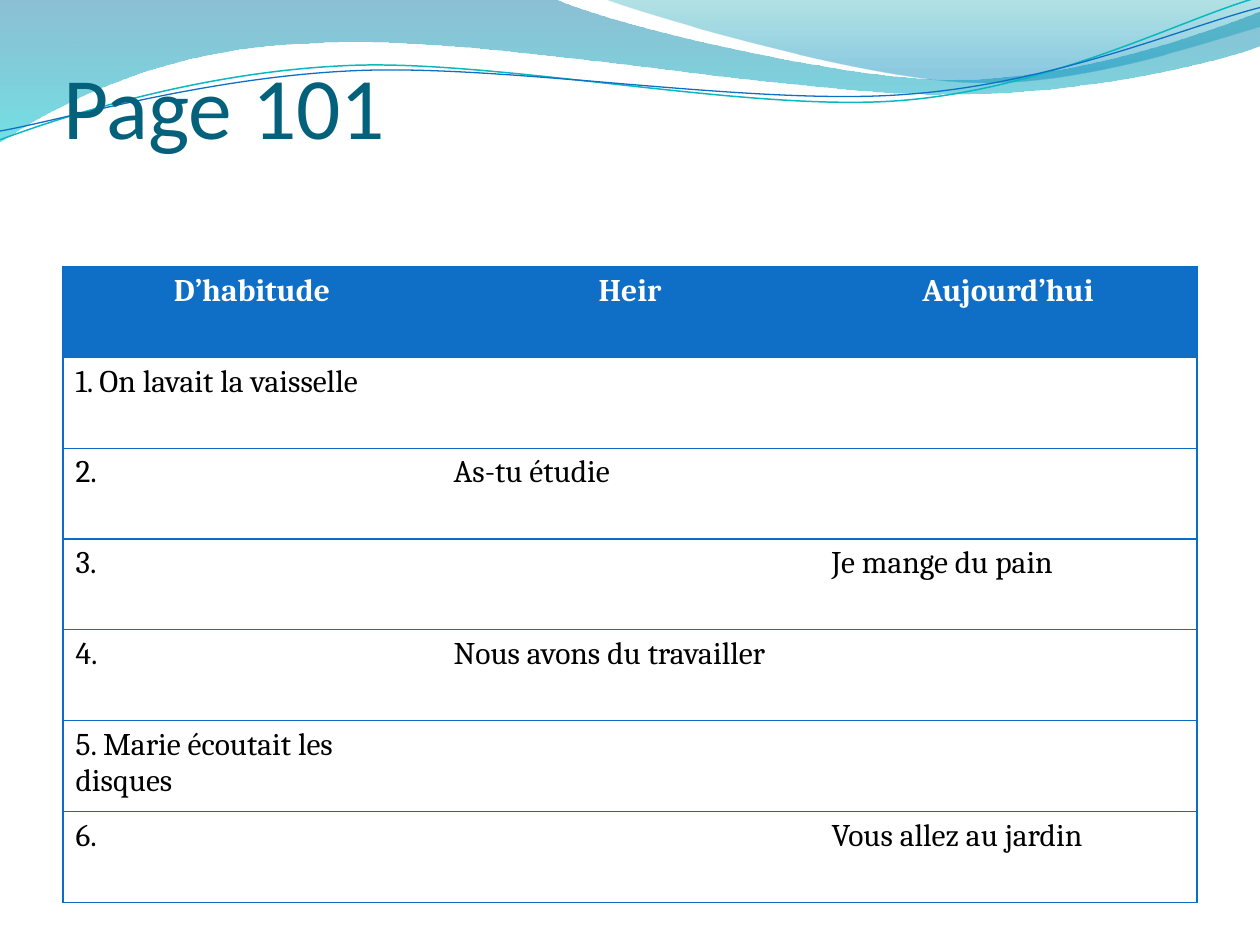
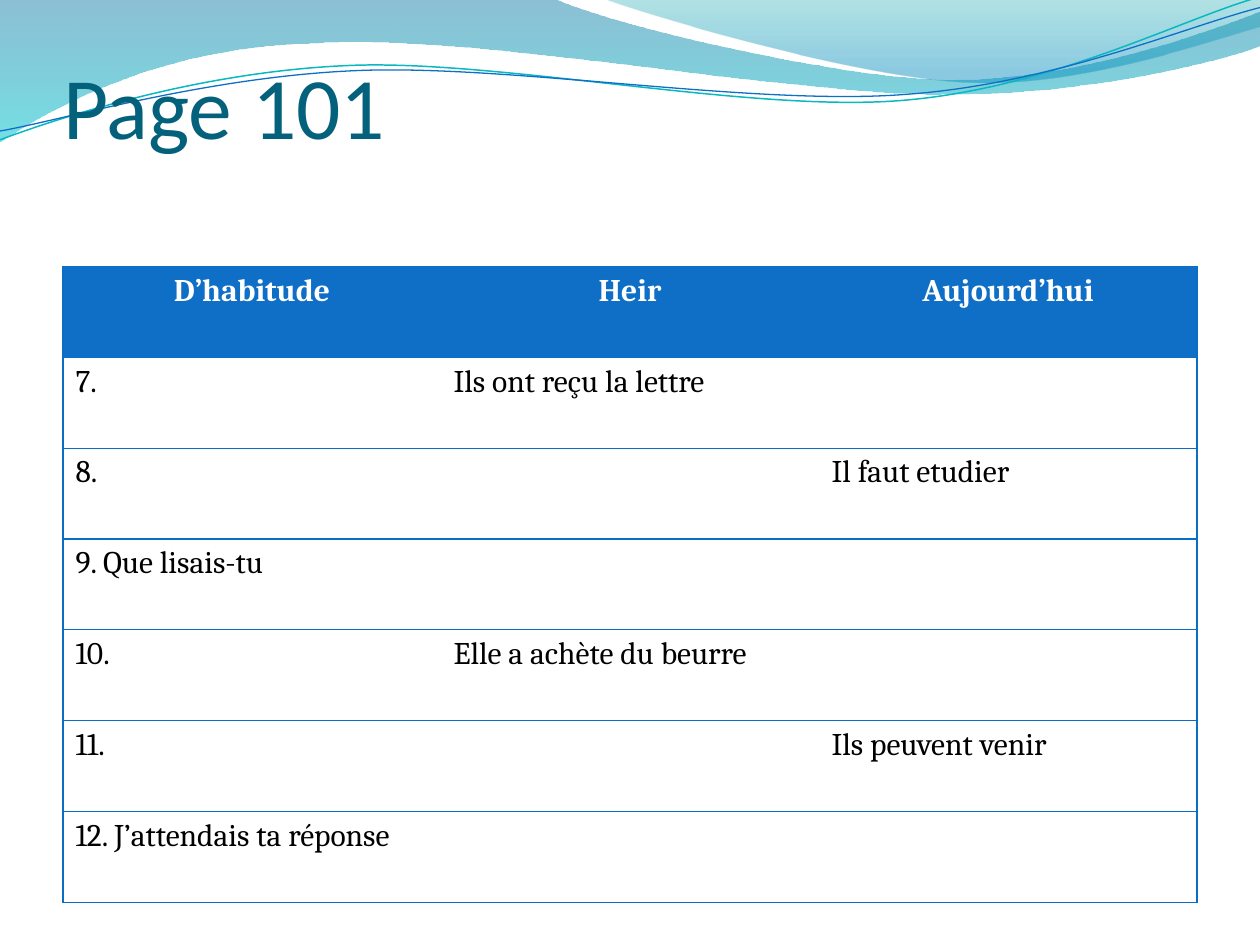
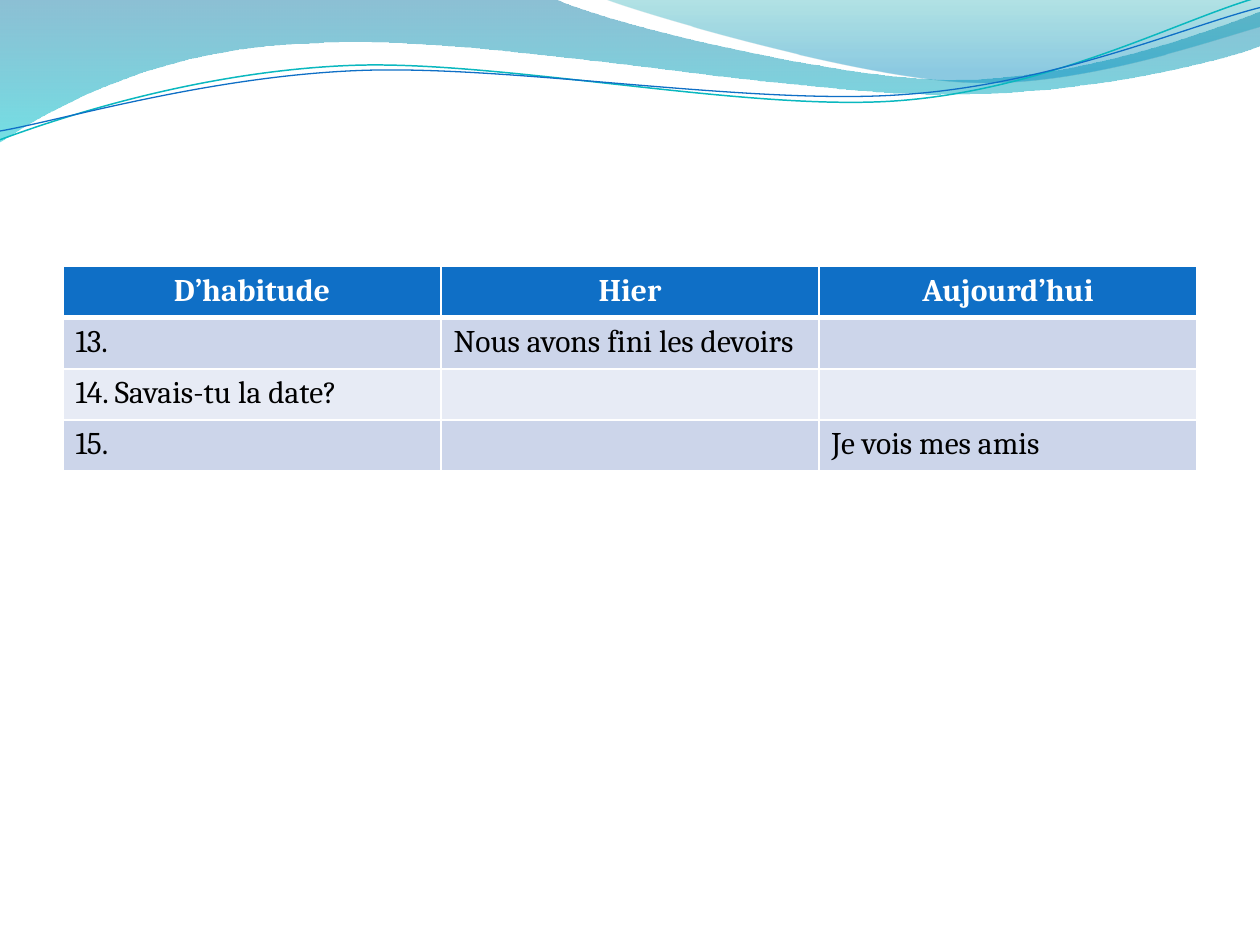
from dataclasses import dataclass

from lxml import etree
from pptx import Presentation
from pptx import util as u
from pptx.dml import color
from pptx.enum import text
from pptx.oxml import ns


@dataclass(frozen=True)
class Theme:
    title_font: str = "Calibri"
    body_font: str = "Cambria"
    title_size: float = 50
    body_size: float = 18
    title: str = "04617B"
    header: str = "0F6FC6"
    rule: str = "0A6DC6"
    white: str = "FFFFFF"
    black: str = "000000"
    bands: tuple = ("CCD5EA", "E7EBF5")
    wave_fill: tuple = ((0, "0074A1", 45), (1, "00C6CF", 55))
    crest_fill: tuple = ((0, "00A1A9", 30), (0.8, "008BBF", 45))
    teal_line: tuple = ("0AB8BF", 0.85)
    blue_line: tuple = ("0F6FC6", 0.75)


@dataclass(frozen=True)
class Outline:
    box: tuple
    segments: tuple


WAVE = Outline((-0.7, -0.7, 721.4, 82.1), (
    (0, 0), (316.8, -0.7),
    (342.7, 12.2, 478.1, 45.4, 545.8, 45.4),
    (614.2, 45.4, 689.8, 18.7, 720, 6.5),
    (720.7, 25.9),
    (707.8, 31.7, 626.4, 54.7, 537.1, 54),
    (447.8, 54, 275, 20.2, 185, 24.5),
    (92.9, 25.9, 33.1, 59.8, -0.7, 81.4),
    (0, 0)))
CREST = Outline((344.9, -0.7, 375.1, 50.4), (
    (344.9, -0.7),
    (366.5, 7.9, 491, 44.6, 553.7, 46.8),
    (616.3, 49.7, 691.9, 23, 720, 15.1),
    (720, 0), (344.9, -0.7)))
TEAL_CURVE = Outline((-1.4, 15.8, 721.4, 51.1), (
    (-1.4, 62.9),
    (33.8, 51.7, 114.1, 29.4, 199.8, 29.9),
    (284.8, 30.3, 425.9, 67.3, 512.5, 64.8),
    (599.1, 62.4, 676.5, 25.7, 720.2, 15.6)))
BLUE_CURVE = Outline((-1.4, 21.6, 722.2, 41.8), (
    (-1.1, 57.9),
    (32.9, 53.7, 118.3, 32.5, 204.1, 33),
    (290.6, 33.4, 428.9, 63.8, 515.5, 61.4),
    (601.4, 59.6, 678.4, 30.1, 721.4, 21.3)))

CURVE_ROTATION = 357.3
NO_GRID_STYLE = "{2D5ABB26-0587-4C30-8999-92F81FD0307C}"
TITLE_ONLY, BLANK = 5, 6
USUALLY, YESTERDAY, TODAY = range(3)


def rgb(value):
    return color.RGBColor.from_string(value)


class Deck:
    def __init__(self, theme):
        self.theme = theme
        self.prs = Presentation()
        self.prs.slide_width, self.prs.slide_height = u.Pt(720), u.Pt(540)
        self.s = None

    def slide(self, title=None):
        layout = TITLE_ONLY if title else BLANK
        self.s = self.prs.slides.add_slide(self.prs.slide_layouts[layout])
        if title:
            self.title(title)

    def font(self, p, name, size, value, bold=False):
        f = p.font
        f.name, f.size, f.bold = name, u.Pt(size), bold
        f.color.rgb = rgb(value)

    def title(self, words):
        sp = self.s.shapes.title
        sp.left, sp.top, sp.width, sp.height = u.Pt(36), u.Pt(23.8), u.Pt(648), u.Pt(66.2)
        tf = sp.text_frame
        tf.text = words
        tf.auto_size = text.MSO_AUTO_SIZE.NONE
        tf.vertical_anchor = text.MSO_ANCHOR.BOTTOM
        tf.margin_left = tf.margin_right = tf.margin_bottom = 0
        tf.margin_top = u.Pt(3.6)
        p = tf.paragraphs[0]
        p.alignment = text.PP_ALIGN.LEFT
        self.font(p, self.theme.title_font, self.theme.title_size, self.theme.title)

    def freeform(self, outline, closed):
        left, top, width, height = outline.box
        builder = self.s.shapes.build_freeform(u.Pt(left), u.Pt(top), scale=1.0)
        builder.add_line_segments([(u.Pt(left + width), u.Pt(top + height))], close=False)
        sp = builder.convert_to_shape()
        sp.shadow.inherit = False
        track = sp.element.xpath(".//a:path")[0]
        for child in list(track):
            track.remove(child)
        for i, seg in enumerate(outline.segments):
            tag = "cubicBezTo" if len(seg) == 6 else "lnTo" if i else "moveTo"
            step = etree.SubElement(track, ns.qn(f"a:{tag}"))
            for x, y in zip(seg[::2], seg[1::2]):
                etree.SubElement(step, ns.qn("a:pt"),
                                 x=str(u.Pt(x - left)), y=str(u.Pt(y - top)))
        if closed:
            etree.SubElement(track, ns.qn("a:close"))
        return sp

    def area(self, outline, stops):
        sp = self.freeform(outline, True)
        sp.line.fill.background()
        sp.fill.gradient()
        sp.fill.gradient_angle = 270
        for stop, (position, value, opacity) in zip(sp.fill.gradient_stops, stops):
            stop.position = position
            stop.color.rgb = rgb(value)
            clr = sp.element.xpath(f".//a:gs/a:srgbClr[@val='{value}']")[0]
            etree.SubElement(clr, ns.qn("a:alpha"), val=str(opacity * 1000))
        return sp

    def curve(self, outline, stroke):
        sp = self.freeform(outline, False)
        sp.rotation = CURVE_ROTATION
        sp.fill.background()
        sp.line.color.rgb = rgb(stroke[0])
        sp.line.width = u.Pt(stroke[1])
        return sp

    def master_waves(self):
        t = self.theme
        waves = [self.area(WAVE, t.wave_fill), self.area(CREST, t.crest_fill),
                 self.curve(TEAL_CURVE, t.teal_line), self.curve(BLUE_CURVE, t.blue_line)]
        tree = self.prs.slide_master.shapes.element
        for i, sp in enumerate(waves):
            sp.element.nvSpPr.cNvPr.id = 20 + i
            tree.insert(2 + i, sp.element)

    def border(self, cell, sides):
        tcPr = cell._tc.get_or_add_tcPr()
        for side in "LRTB":
            if side in sides:
                value, width = sides[side]
                ln = etree.SubElement(tcPr, ns.qn(f"a:ln{side}"), w=str(u.Pt(width)))
                fill = etree.SubElement(ln, ns.qn("a:solidFill"))
                etree.SubElement(fill, ns.qn("a:srgbClr"), val=value)

    def ruled_sides(self, row, col):
        line = (self.theme.rule, 0.75)
        sides = {"T": line, "B": line}
        if col == USUALLY:
            sides["L"] = line
        if col == TODAY:
            sides["R"] = line
        return sides

    def banded_sides(self, row, col):
        sides = dict.fromkeys("LRTB", (self.theme.white, 1))
        if row < 2:
            sides["BT"[row]] = (self.theme.white, 3)
        return sides

    def table(self, headers, rows, row_height, banded=False):
        t = self.theme
        grid = [headers, *rows]
        frame = self.s.shapes.add_table(len(grid), len(headers), u.Pt(36), u.Pt(152.4),
                                        u.Pt(648), u.Pt(row_height * len(grid)))
        frame.element.xpath(".//a:tableStyleId")[0].text = NO_GRID_STYLE
        tbl = frame.table
        tbl.horz_banding = False
        sides = self.banded_sides if banded else self.ruled_sides
        for r, words in enumerate(grid):
            tbl.rows[r].height = u.Pt(row_height)
            for c, word in enumerate(words):
                cell = tbl.cell(r, c)
                cell.text = word
                self.border(cell, sides(r, c))
                if r and not banded:
                    cell.fill.background()
                else:
                    cell.fill.solid()
                    cell.fill.fore_color.rgb = rgb(t.bands[(r - 1) % 2] if r else t.header)
                p = cell.text_frame.paragraphs[0]
                p.alignment = text.PP_ALIGN.LEFT if r else text.PP_ALIGN.CENTER
                self.font(p, t.body_font, t.body_size, t.black if r else t.white, not r)


def exercise_rows(first, sentences):
    rows = []
    for number, (col, sentence) in enumerate(sentences, first):
        row = [""] * 3
        row[col] = sentence
        row[USUALLY] = f"{number}. {row[USUALLY]}".strip()
        rows.append(row)
    return rows


def main():
    deck = Deck(Theme())

    deck.slide("Page 101")
    deck.master_waves()
    deck.table(["D’habitude", "Heir", "Aujourd’hui"], exercise_rows(1, [
        (USUALLY, "On lavait la vaisselle"),
        (YESTERDAY, "As-tu étudie"),
        (TODAY, "Je mange du pain"),
        (YESTERDAY, "Nous avons du travailler"),
        (USUALLY, "Marie écoutait les disques"),
        (TODAY, "Vous allez au jardin"),
    ]), 51.9)

    deck.slide("Page 101")
    deck.table(["D’habitude", "Heir", "Aujourd’hui"], exercise_rows(7, [
        (YESTERDAY, "Ils ont reçu la lettre"),
        (TODAY, "Il faut etudier"),
        (USUALLY, "Que lisais-tu"),
        (YESTERDAY, "Elle a achète du beurre"),
        (TODAY, "Ils peuvent venir"),
        (USUALLY, "J’attendais ta réponse"),
    ]), 51.9)

    deck.slide()
    deck.table(["D’habitude", "Hier", "Aujourd’hui"], exercise_rows(13, [
        (YESTERDAY, "Nous avons fini les devoirs"),
        (USUALLY, "Savais-tu la date?"),
        (TODAY, "Je vois mes amis"),
    ]), 29.2, banded=True)

    deck.prs.save("out.pptx")


if __name__ == "__main__":
    main()
